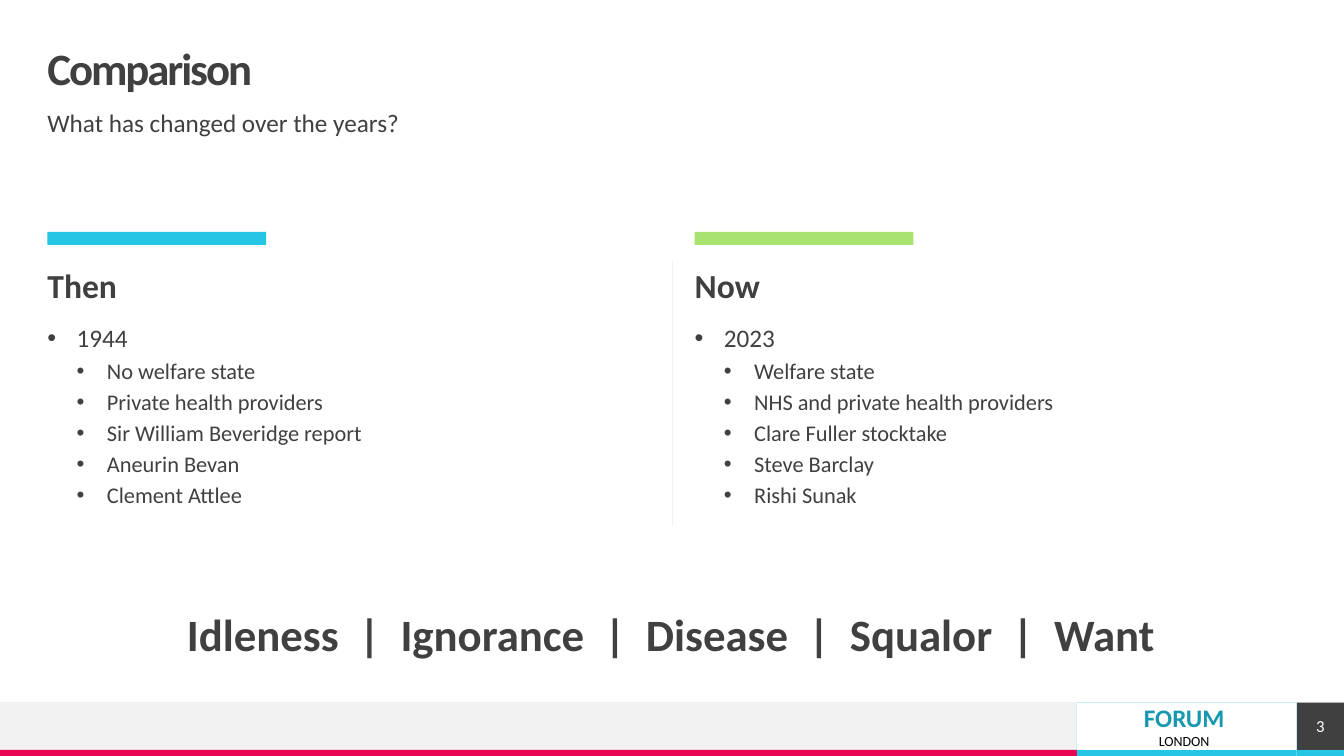
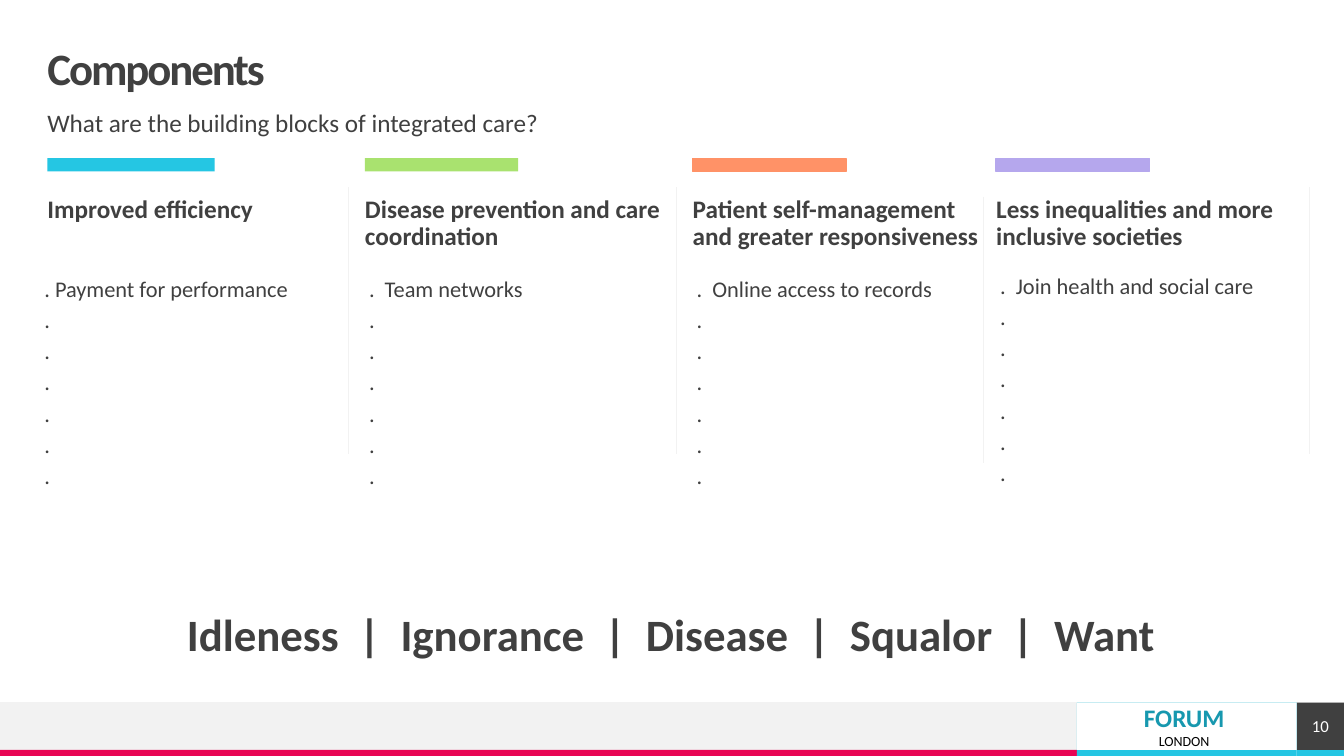
from dataclasses import dataclass

from lxml import etree
from pptx import Presentation
from pptx.dml.color import RGBColor
from pptx.enum.shapes import MSO_CONNECTOR as Connector, MSO_SHAPE as Shape
from pptx.enum.text import MSO_ANCHOR as Anchor, PP_ALIGN as Align
from pptx.oxml.ns import qn
from pptx.util import Inches, Pt

WIDTH, HEIGHT = 13.33, 7.5
MARGIN, CONTENT_WIDTH = 0.47, 12.4
FONT = "Calibri"
DARK, WHITE, BLACK, PALE = "404040", "FFFFFF", "000000", "F2F2F2"
CYAN, GREEN, ORANGE, LILAC = "25C6E3", "A9E26F", "FF9267", "B5A7ED"
MAGENTA, TEAL = "E80554", "1798AF"

BAND_TOP, BAND_HEIGHT, STRIPE = 6.97, 0.47, 0.06
TAG_LEFT, TAG_WIDTH = 10.68, 2.18
NUMBER_LEFT = TAG_LEFT + TAG_WIDTH
BAR_HEIGHT, DIVIDER_HEIGHT = 0.13, 2.64
GIANTS = ("Idleness", "Ignorance", "Disease", "Squalor", "Want")


@dataclass
class Component:
    left: float
    color: str
    heading: str
    item: str
    divider: float
    bar_width: float = 1.52
    outline: bool = False
    list_shift: float = -0.25
    list_top: float = 2.76
    divider_top: float = 1.86


COMPONENTS = (
    Component(0.47, CYAN, "Improved efficiency", ". Payment for performance", 3.46,
              bar_width=1.66, list_shift=-0.32),
    Component(3.62, GREEN, "Disease prevention and care coordination",
              ".  Team networks", 6.71),
    Component(6.87, ORANGE, "Patient self-management and greater responsiveness",
              ".  Online access to records", 9.75, outline=True, divider_top=1.95),
    Component(9.88, LILAC, "Less inequalities and more inclusive societies",
              ".  Join health and social care", 12.99, outline=True, list_top=2.73),
)


def rgb(value):
    return RGBColor.from_string(value)


def add_rectangle(slide, left, top, width, height, fill, outline=False):
    shape = slide.shapes.add_shape(
        Shape.RECTANGLE, Inches(left), Inches(top), Inches(width), Inches(height))
    shape.shadow.inherit = False
    shape.fill.solid()
    shape.fill.fore_color.rgb = rgb(fill)
    if outline:
        shape.line.color.rgb = rgb(fill)
        shape.line.width = Pt(1)
    else:
        shape.line.fill.background()
    return shape


def add_line(slide, start, end):
    points = [Inches(value) for value in (*start, *end)]
    line = slide.shapes.add_connector(Connector.STRAIGHT, *points)
    line.line.color.rgb = rgb(PALE)
    line.line.width = Pt(0.5)
    etree.SubElement(line._element.spPr, qn("a:effectLst"))


def add_box(slide, left, top, width, height, inset=(0, 0), anchor=Anchor.TOP):
    """Add an empty wrapping text box and return its text frame."""
    box = slide.shapes.add_textbox(
        Inches(left), Inches(top), Inches(width), Inches(height))
    return prepare_frame(box.text_frame, inset, anchor)


def prepare_frame(frame, inset=(0, 0), anchor=Anchor.TOP):
    frame.word_wrap = True
    frame.vertical_anchor = anchor
    frame.margin_left = frame.margin_right = Inches(inset[0])
    frame.margin_top = frame.margin_bottom = Inches(inset[1])
    return frame


def write(frame, text, size=18, color=DARK, bold=False, align=Align.LEFT,
          line_spacing=0.9, before=10, level=0, margin=0, hanging=0,
          bullet=None, tracking=None):
    """Write one paragraph, using the frame's first one while it is empty."""
    paragraph = frame.paragraphs[0]
    if paragraph.runs:
        paragraph = frame.add_paragraph()
    paragraph.alignment = align
    paragraph.line_spacing = line_spacing
    paragraph.space_before = Pt(before)
    paragraph.level = level
    run = paragraph.add_run()
    run.text = text
    run.font.name = FONT
    run.font.size = Pt(size)
    run.font.bold = bold
    run.font.color.rgb = rgb(color)
    properties = paragraph._p.get_or_add_pPr()
    properties.set("marL", str(Inches(margin)))
    properties.set("indent", str(-Inches(hanging)))
    if bullet:
        font = etree.SubElement(properties, qn("a:buFont"))
        font.set("typeface", "Arial")
        etree.SubElement(properties, qn("a:buChar")).set("char", bullet)
    if tracking is not None:
        run._r.get_or_add_rPr().set("spc", str(round(tracking * 100)))


def add_header(slide, title, subtitle):
    frame = add_box(slide, MARGIN, 0.47, CONTENT_WIDTH, 0.47, anchor=Anchor.MIDDLE)
    write(frame, title, size=32, bold=True, before=0, tracking=-1.5)
    write(add_box(slide, MARGIN, 1.1, CONTENT_WIDTH, 0.39), subtitle)


def add_event_tag(slide, left, top, width):
    add_rectangle(slide, left, top, width, HEIGHT - top, CYAN)
    add_rectangle(slide, left, top, width, BAND_HEIGHT, WHITE)
    frame = add_box(slide, left + 0.05, top - 0.05, 2.03, 0.57, inset=(0.1, 0.05))
    caption = dict(align=Align.CENTER, line_spacing=1.0, before=0)
    write(frame, "FORUM", color=TEAL, bold=True, **caption)
    write(frame, "LONDON", size=10, color=BLACK, **caption)


def add_footer(slide, number):
    stripe_top = BAND_TOP + BAND_HEIGHT
    number_width = WIDTH - NUMBER_LEFT
    add_rectangle(slide, 0, BAND_TOP, 10.7, BAND_HEIGHT, PALE)
    add_rectangle(slide, 0, stripe_top, 10.7, STRIPE, MAGENTA)
    add_rectangle(slide, NUMBER_LEFT, stripe_top, number_width, STRIPE, CYAN)
    add_line(slide, (WIDTH, BAND_TOP), (0, BAND_TOP))
    square = add_rectangle(
        slide, NUMBER_LEFT, BAND_TOP, number_width, BAND_HEIGHT, DARK)
    frame = prepare_frame(square.text_frame, anchor=Anchor.MIDDLE)
    write(frame, str(number), size=12, color=WHITE, align=Align.CENTER,
          line_spacing=1.0, before=0)
    add_event_tag(slide, TAG_LEFT, BAND_TOP, TAG_WIDTH)


def add_giants(slide):
    """Add the line that names the five giants."""
    write(add_box(slide, 0.46, 6.08, CONTENT_WIDTH, 0.39), "  |  ".join(GIANTS),
          size=32, bold=True, align=Align.CENTER)


def add_framed_slide(presentation, title, subtitle, number):
    slide = presentation.slides.add_slide(presentation.slide_layouts[6])
    add_header(slide, title, subtitle)
    add_footer(slide, number)
    add_giants(slide)
    return slide


def add_era(slide, left, top, width, color, heading, year, facts):
    add_rectangle(slide, left, top, 2.17, BAR_HEIGHT, color)
    write(add_box(slide, left, top + 0.37, width, 0.39), heading, size=24, bold=True)
    frame = add_box(slide, left, top + 0.93, width, 2.4)
    write(frame, year, margin=0.29, hanging=0.29, bullet="•")
    for fact in facts:
        write(frame, fact, size=16, before=5, level=1, margin=0.59, hanging=0.3,
              bullet="•")


def add_component(slide, component, top):
    left = component.left
    add_rectangle(slide, left, top, component.bar_width, BAR_HEIGHT,
                  component.color, component.outline)
    write(add_box(slide, left, top + 0.38, 3.01, 0.39), component.heading, bold=True)
    frame = add_box(slide, left + component.list_shift, component.list_top, 2.84, 2.4)
    for text in (component.item, *["."] * 6):
        write(frame, text, size=16, before=5, level=1, margin=0.29)
    add_line(slide, (component.divider, component.divider_top),
             (component.divider, component.divider_top + DIVIDER_HEIGHT))


def build_comparison(presentation):
    slide = add_framed_slide(
        presentation, "Comparison", "What has changed over the years?", 3)
    add_era(slide, MARGIN, 2.3, 5.98, CYAN, "Then", "1944", (
        "No welfare state", "Private health providers",
        "Sir William Beveridge report", "Aneurin Bevan", "Clement Attlee"))
    add_era(slide, 6.89, 2.3, 5.98, GREEN, "Now", "2023", (
        "Welfare state", "NHS and private health providers",
        "Clare Fuller stocktake", "Steve Barclay", "Rishi Sunak"))
    add_line(slide, (6.67, 2.58), (6.67, 2.58 + DIVIDER_HEIGHT))


def build_components(presentation):
    slide = add_framed_slide(
        presentation, "Components",
        "What are the building blocks of integrated care?", 10)
    for component in COMPONENTS:
        add_component(slide, component, 1.57)


def main():
    presentation = Presentation()
    presentation.slide_width = Inches(WIDTH)
    presentation.slide_height = Inches(HEIGHT)
    build_comparison(presentation)
    build_components(presentation)
    presentation.save("out.pptx")


if __name__ == "__main__":
    main()
